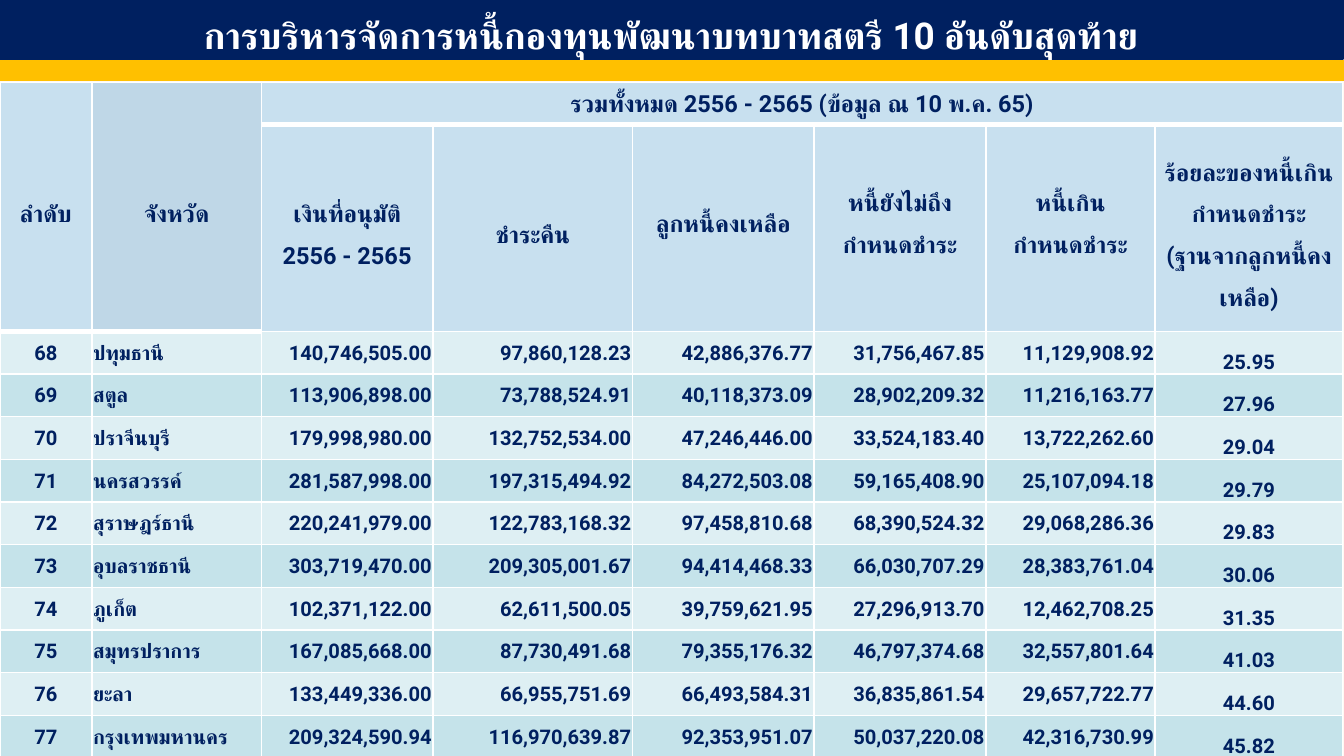
from lxml.etree import SubElement
from pptx import Presentation
from pptx.dml.color import RGBColor as Rgb
from pptx.enum.shapes import MSO_SHAPE as Shape
from pptx.enum.text import MSO_ANCHOR as Anchor, MSO_AUTO_SIZE as AutoSize, PP_ALIGN as Align
from pptx.oxml.ns import qn
from pptx.util import Inches, Pt

WIDTH, HEIGHT = 11.11, 6.25
FONT = "Roboto"
COLORS = {
    "navy": "002060", "gold": "FFC000", "white": "FFFFFF", "cream": "FCEBD1",
    "header": "94C8ED", "province": "BFD7E7", "light": "DBEEF4", "teal": "B7DEE8",
}

# Table grid in inches
TABLE_TOP, TABLE_HEIGHT = 0.68, 5.59
COLUMNS = [0.76, 1.4, 1.42, 1.65, 1.5, 1.42, 1.4, 1.55]
HEADER_ROWS = [0.35, 1.71]
RAISED = 0.18  # bottom margin that lifts a heading above the middle

TITLE = "การบริหารจัดการหนี้กองทุนพัฒนาบทบาทสตรี 10 อันดับสุดท้าย"
PERIOD = "รวมทั้งหมด 2556 - 2565 (ข้อมูล ณ 10 พ.ค. 65)"
SIDE_HEADINGS = [("ลำดับ", "header", 50), ("จังหวัด", "province", 100)]
HEADINGS = [
    ("เงินที่อนุมัติ\n2556 - 2565", 0),
    ("ชำระคืน", 0),
    ("ลูกหนี้คงเหลือ", RAISED),
    ("หนี้ยังไม่ถึง\nกำหนดชำระ", RAISED),
    ("หนี้เกิน\nกำหนดชำระ", RAISED),
    ("ร้อยละของหนี้เกิน\nกำหนดชำระ\n(ฐานจากลูกหนี้คงเหลือ)", 0),
]
FIRST_RANK = 68
PROVINCES = [
    ("ปทุมธานี", "140,746,505.00", "97,860,128.23", "42,886,376.77", "31,756,467.85", "11,129,908.92", "25.95"),
    ("สตูล", "113,906,898.00", "73,788,524.91", "40,118,373.09", "28,902,209.32", "11,216,163.77", "27.96"),
    ("ปราจีนบุรี", "179,998,980.00", "132,752,534.00", "47,246,446.00", "33,524,183.40", "13,722,262.60", "29.04"),
    ("นครสวรรค์", "281,587,998.00", "197,315,494.92", "84,272,503.08", "59,165,408.90", "25,107,094.18", "29.79"),
    ("สุราษฎร์ธานี", "220,241,979.00", "122,783,168.32", "97,458,810.68", "68,390,524.32", "29,068,286.36", "29.83"),
    ("อุบลราชธานี", "303,719,470.00", "209,305,001.67", "94,414,468.33", "66,030,707.29", "28,383,761.04", "30.06"),
    ("ภูเก็ต", "102,371,122.00", "62,611,500.05", "39,759,621.95", "27,296,913.70", "12,462,708.25", "31.35"),
    ("สมุทรปราการ", "167,085,668.00", "87,730,491.68", "79,355,176.32", "46,797,374.68", "32,557,801.64", "41.03"),
    ("ยะลา", "133,449,336.00", "66,955,751.69", "66,493,584.31", "36,835,861.54", "29,657,722.77", "44.60"),
    ("กรุงเทพมหานคร", "209,324,590.94", "116,970,639.87", "92,353,951.07", "50,037,220.08", "42,316,730.99", "45.82"),
]


def color(name):
    return Rgb.from_string(COLORS[name])


def set_alpha(element, percent):
    """Make every colour inside the element partly transparent."""
    if percent < 100:
        for tone in element.iter(qn("a:srgbClr")):
            SubElement(tone, qn("a:alpha"), val=str(percent * 1000))


def write(frame, text, size, tone, align, spacing=1.0):
    para = frame.paragraphs[0]
    para.text = text
    para.alignment = align
    para.line_spacing = spacing
    para.font.size = Pt(size)
    para.font.bold = True
    para.font.color.rgb = color(tone)
    para.font.name = FONT
    # Thai letters take the complex-script font
    defaults = para._p.pPr.find(qn("a:defRPr"))
    SubElement(defaults, qn("a:cs"), typeface=FONT)


def paint_bar(box, tone, left, top, width, height):
    box.left, box.top = Inches(left), Inches(top)
    box.width, box.height = Inches(width), Inches(height)
    box.fill.solid()
    box.fill.fore_color.rgb = color(tone)
    box.line.color.rgb = color(tone)
    box.line.width = Pt(1)


def add_borders(cell, bottom):
    properties = cell._tc.get_or_add_tcPr()
    for place, (side, width) in enumerate([("L", 1), ("R", 1), ("T", 1), ("B", bottom)]):
        line = SubElement(properties, qn(f"a:ln{side}"), w=str(Pt(width)))
        fill = SubElement(line, qn("a:solidFill"))
        SubElement(fill, qn("a:srgbClr"), val=COLORS["white"])
        properties.insert(place, line)


def style_cell(cell, tone, alpha, bottom=1):
    cell.fill.solid()
    cell.fill.fore_color.rgb = color(tone)
    set_alpha(cell._tc.get_or_add_tcPr(), alpha)
    cell.margin_left = cell.margin_right = cell.margin_top = Inches(0.01)
    cell.margin_bottom = 0
    cell.vertical_anchor = Anchor.MIDDLE
    add_borders(cell, bottom)


def fill_header(table):
    # Rank and province span both header rows
    for column, (text, tone, alpha) in enumerate(SIDE_HEADINGS):
        for row in range(2):
            style_cell(table.cell(row, column), tone, alpha, bottom=3)
        table.cell(0, column).merge(table.cell(1, column))
        write(table.cell(0, column).text_frame, text, 14, "navy", Align.CENTER, 1.5)

    # Period spans all the amounts
    first, last = len(SIDE_HEADINGS), len(COLUMNS) - 1
    for column, (text, margin) in enumerate(HEADINGS, first):
        style_cell(table.cell(0, column), "header", 50, bottom=3)
        cell = table.cell(1, column)
        style_cell(cell, "header", 50)
        cell.margin_bottom = Inches(margin)
        write(cell.text_frame, text, 14, "navy", Align.CENTER, 1.5)
    table.cell(0, first).merge(table.cell(0, last))
    write(table.cell(0, first).text_frame, PERIOD, 14, "navy", Align.CENTER)


def fill_body(table):
    aligns = [Align.CENTER, Align.LEFT] + [Align.RIGHT] * 5 + [Align.CENTER]
    bands = [("light", 90), ("teal", 80)]
    for index, province in enumerate(PROVINCES):
        values = (str(FIRST_RANK + index), *province)
        for column, (text, align) in enumerate(zip(values, aligns)):
            cell = table.cell(len(HEADER_ROWS) + index, column)
            style_cell(cell, *bands[index % 2])
            write(cell.text_frame, text, 12, "navy", align)
        cell.vertical_anchor = Anchor.BOTTOM  # percentage column


def add_debt_table(page):
    body_row = (TABLE_HEIGHT - sum(HEADER_ROWS)) / len(PROVINCES)
    heights = HEADER_ROWS + [body_row] * len(PROVINCES)
    table = page.shapes.add_table(
        len(heights), len(COLUMNS), 0, Inches(TABLE_TOP),
        Inches(sum(COLUMNS)), Inches(TABLE_HEIGHT)).table
    table.first_row = table.horz_banding = False
    for column, width in zip(table.columns, COLUMNS):
        column.width = Inches(width)
    for row, height in zip(table.rows, heights):
        row.height = Inches(height)
    fill_header(table)
    fill_body(table)


def add_title(page):
    title = page.shapes.title
    paint_bar(title, "navy", -0.01, -0.02, WIDTH, 0.51)
    frame = title.text_frame
    frame.auto_size = AutoSize.NONE
    frame.word_wrap = True
    frame.vertical_anchor = Anchor.MIDDLE
    write(frame, TITLE, 22, "white", Align.CENTER, 1.3)


def add_gold_bar(page):
    bar = page.shapes.add_shape(Shape.RECTANGLE, 0, 0, 0, 0)
    bar.shadow.inherit = False
    paint_bar(bar, "gold", 0, 0.5, WIDTH, 0.16)


def main():
    deck = Presentation()
    deck.slide_width, deck.slide_height = Inches(WIDTH), Inches(HEIGHT)
    page = deck.slides.add_slide(deck.slide_layouts[5])

    # Pale background
    page.background.fill.solid()
    page.background.fill.fore_color.rgb = color("cream")
    set_alpha(page.element, 25)

    add_debt_table(page)
    add_title(page)
    add_gold_bar(page)
    deck.save("out.pptx")


if __name__ == "__main__":
    main()
